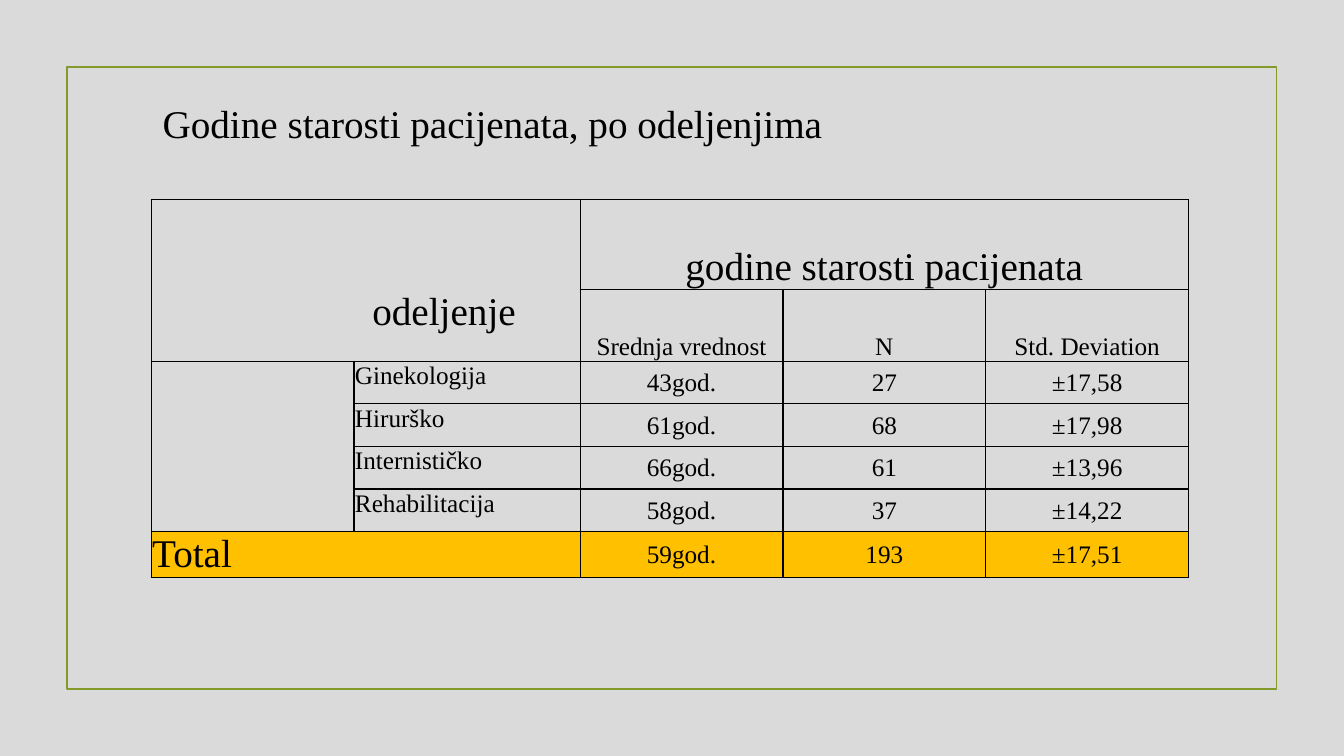
from lxml import etree
from pptx import Presentation
from pptx.dml.color import RGBColor
from pptx.enum.shapes import MSO_SHAPE
from pptx.enum.text import MSO_ANCHOR, PP_ALIGN
from pptx.oxml.ns import qn
from pptx.util import Pt

LEFT, CENTER = PP_ALIGN.LEFT, PP_ALIGN.CENTER
TOP, MIDDLE, BOTTOM = MSO_ANCHOR.TOP, MSO_ANCHOR.MIDDLE, MSO_ANCHOR.BOTTOM

# Content
TITLE = "Godine starosti pacijenata, po odeljenjima"
ROWS = [
    ("odeljenje", "", "godine starosti pacijenata", "", ""),
    ("", "", "Srednja vrednost", "N", "Std. Deviation"),
    ("", "Ginekologija", "43god.", "27", "±17,58"),
    ("", "Hirurško", "61god.", "68", "±17,98"),
    ("", "Internističko", "66god.", "61", "±13,96"),
    ("", "Rehabilitacija", "58god.", "37", "±14,22"),
    ("Total", "", "59god.", "193", "±17,51"),
]
MERGES = [((0, 0), (1, 1)), ((0, 2), (0, 4)), ((2, 0), (5, 0)), ((6, 0), (6, 1))]

# Style
COLORS = {"background": "DADADA", "frame": "83992A", "text": "000000",
          "border": "000000", "total": "FFC000"}
FONT = "Times New Roman"
LARGE, NORMAL = 28, 18
COLUMN_WIDTH = 144.9
ROW_HEIGHTS = [64.3, 51.4] + [30.4] * 4 + [32.7]
HEADER_ROWS = 2
TOTAL_ROW = len(ROWS) - 1


def color(name):
    return RGBColor.from_string(COLORS[name])


def write(text_frame, text, size, alignment):
    paragraph = text_frame.paragraphs[0]
    paragraph.text = text
    paragraph.alignment = alignment
    paragraph.font.name = FONT
    paragraph.font.size = Pt(size)
    paragraph.font.bold = False
    paragraph.font.color.rgb = color("text")


def add_borders(cell):
    properties = cell._tc.get_or_add_tcPr()
    for index, side in enumerate(("lnL", "lnR", "lnT", "lnB")):
        line = etree.Element(qn(f"a:{side}"), w=str(Pt(1)))
        fill = etree.SubElement(line, qn("a:solidFill"))
        etree.SubElement(fill, qn("a:srgbClr"), val=COLORS["border"])
        properties.insert(index, line)


def format_cell(cell, row, column, text):
    size = LARGE if row in (0, TOTAL_ROW) and column in (0, 2) else NORMAL
    if row == TOTAL_ROW and column > 0:
        size = NORMAL
    write(cell.text_frame, text, size, LEFT if column < 2 else CENTER)
    if row < HEADER_ROWS:
        cell.vertical_anchor = BOTTOM
    else:
        cell.vertical_anchor = TOP if column < 2 else MIDDLE
    cell.margin_left = cell.margin_right = cell.margin_top = Pt(0.7)
    cell.margin_bottom = Pt(0)
    if row == TOTAL_ROW:
        cell.fill.solid()
        cell.fill.fore_color.rgb = color("total")
    else:
        cell.fill.background()
    add_borders(cell)


def main():
    presentation = Presentation()
    presentation.slide_width, presentation.slide_height = Pt(960), Pt(540)
    slide = presentation.slides.add_slide(presentation.slide_layouts[6])
    slide.background.fill.solid()
    slide.background.fill.fore_color.rgb = color("background")

    # Frame
    frame = slide.shapes.add_shape(MSO_SHAPE.RECTANGLE, Pt(47.8), Pt(48), Pt(864), Pt(444))
    frame.shadow.inherit = False
    frame.fill.background()
    frame.line.color.rgb = color("frame")
    frame.line.width = Pt(1.25)

    # Table
    width = COLUMN_WIDTH * len(ROWS[0])
    table = slide.shapes.add_table(len(ROWS), len(ROWS[0]), Pt(108), Pt(142.4),
                                   Pt(width), Pt(sum(ROW_HEIGHTS))).table
    table.first_row = table.horz_banding = False
    for column in table.columns:
        column.width = Pt(COLUMN_WIDTH)
    for row, height in zip(table.rows, ROW_HEIGHTS):
        row.height = Pt(height)
    for row, texts in enumerate(ROWS):
        for column, text in enumerate(texts):
            format_cell(table.cell(row, column), row, column, text)
    for first, last in MERGES:
        table.cell(*first).merge(table.cell(*last))

    # The department heading sits inside its corner cell
    corner = table.cell(0, 0)
    corner.margin_left, corner.margin_bottom = Pt(158), Pt(19.6)

    # Title
    title = slide.shapes.add_textbox(Pt(106.6), Pt(67.7), Pt(490.3), Pt(41))
    title.text_frame.word_wrap = False
    write(title.text_frame, TITLE, LARGE, CENTER)

    presentation.save("out.pptx")


if __name__ == "__main__":
    main()
